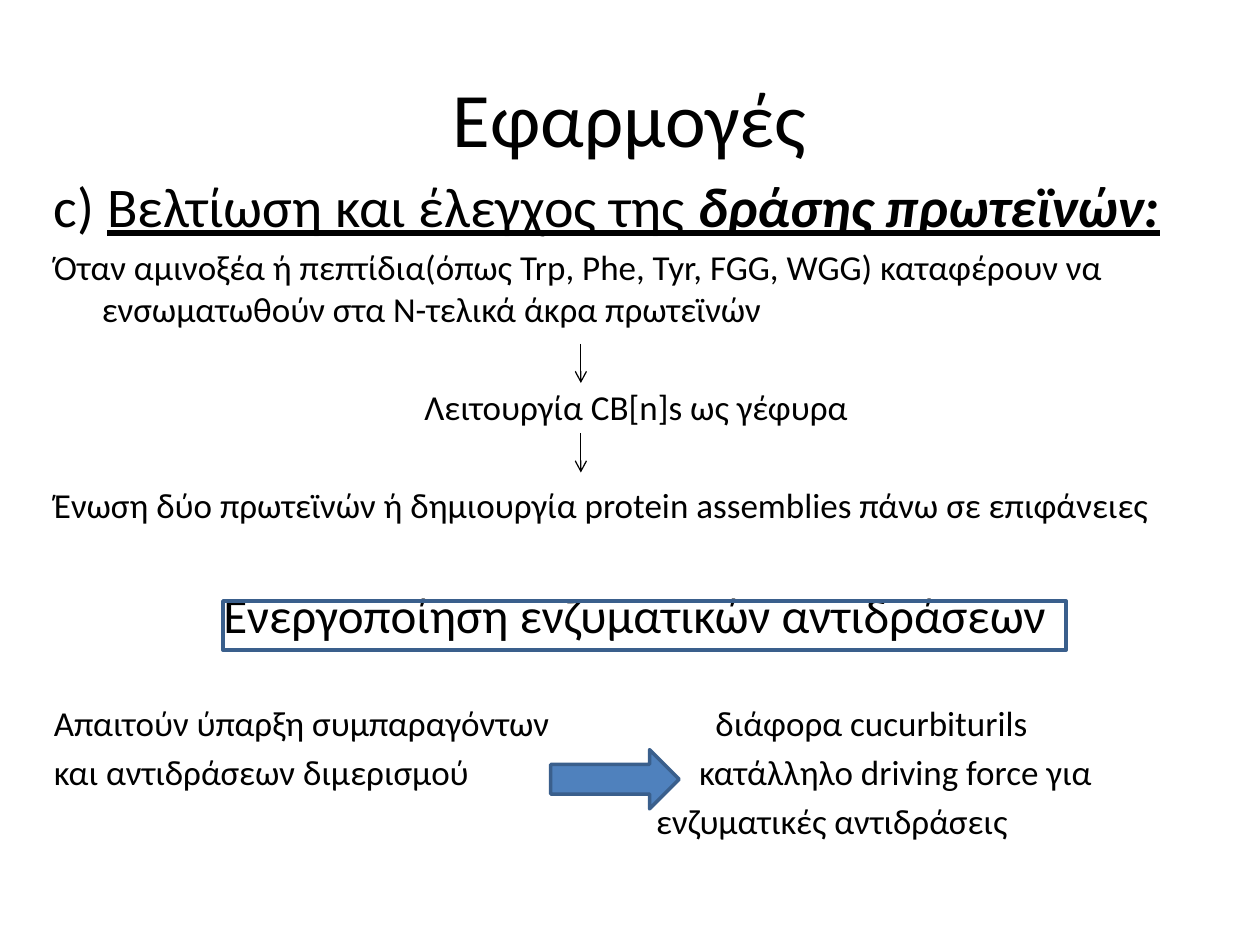
from dataclasses import dataclass
from typing import NamedTuple

from lxml import etree
from pptx import Presentation
from pptx.dml.color import RGBColor
from pptx.enum import shapes, text
from pptx.oxml.ns import qn
from pptx.util import Inches, Pt


@dataclass(frozen=True)
class Theme:
    font: str = "Calibri"
    ink: str = "000000"
    blue: str = "4F81BD"
    edge: str = "3A5F8C"
    title: int = 44
    lead: int = 32
    head: int = 28
    body: int = 20
    gap: float = 3.8  # space before a paragraph
    skip: int = 32    # space before a new step
    wide: int = 34    # space before the heading


class Run(NamedTuple):
    words: str
    style: dict = {}


class Para(NamedTuple):
    runs: list
    size: int
    gap: float
    mid: bool = False
    left: float = 0.38
    hang: float = -0.38


T = Theme()
MID = text.PP_ALIGN.CENTER


def body(words: str, gap: float = T.gap, **more) -> Para:
    return Para([Run(words)], T.body, gap, **more)


TITLE = [Para([Run("Εφαρμογές")], T.title, 0, mid=True, left=0, hang=0)]
BODY = [
    Para([Run("c) "),
          Run("Βελτίωση και έλεγχος της ", {"underline": True}),
          Run("δράσης πρωτεϊνών:", {"underline": True, "bold": True, "italic": True})],
         T.lead, T.gap),
    body("Όταν αμινοξέα ή πεπτίδια(όπως Trp, Phe, Tyr, FGG, WGG) καταφέρουν να "
         "ενσωματωθούν στα Ν-τελικά άκρα πρωτεϊνών"),
    body("Λειτουργία CB[n]s ως γέφυρα ", T.skip, mid=True),
    body("Ένωση δύο πρωτεϊνών ή δημιουργία protein assemblies πάνω σε επιφάνειες", T.skip),
    Para([Run("Ενεργοποίηση ενζυματικών αντιδράσεων ")], T.head, T.wide, mid=True),
]
NEEDS = [
    body("Απαιτούν ύπαρξη συμπαραγόντων", 0),
    body("και αντιδράσεων διμερισμού"),
]
GAINS = [
    body("διάφορα cucurbiturils", 0, left=0.47, hang=0),
    body("κατάλληλο driving force για", left=0.34, hang=0),
    body("ενζυματικές αντιδράσεις", left=0, hang=0),
]


def color(code: str) -> RGBColor:
    return RGBColor.from_string(code)


def write(slide, at: tuple, paras: list, anchor=text.MSO_ANCHOR.TOP) -> None:
    frame = slide.shapes.add_textbox(*map(Inches, at)).text_frame
    frame.word_wrap = True
    frame.vertical_anchor = anchor
    for i, item in enumerate(paras):
        para = frame.add_paragraph() if i else frame.paragraphs[0]
        para.space_before = Pt(item.gap)
        if item.mid:
            para.alignment = MID
        # Hanging indent
        props = para._p.get_or_add_pPr()
        props.set("marL", str(Inches(item.left)))
        props.set("indent", str(Inches(item.hang)))
        for part in item.runs:
            run = para.add_run()
            run.text = part.words
            run.font.color.rgb = color(T.ink)
            style = {"name": T.font, "size": Pt(item.size), **part.style}
            for key, value in style.items():
                setattr(run.font, key, value)


def arrow(slide, x: float, top: float, end: float) -> None:
    line = slide.shapes.add_connector(
        shapes.MSO_CONNECTOR.STRAIGHT, *map(Inches, (x, top, x, end)))
    line.line.color.rgb = color(T.ink)
    line.line.width = Pt(0.75)
    etree.SubElement(line.line._get_or_add_ln(), qn("a:tailEnd"), type="arrow")
    etree.SubElement(line._element.spPr, qn("a:effectLst"))


def block(slide, kind, at: tuple, fill: str = "") -> None:
    shape = slide.shapes.add_shape(kind, *map(Inches, at))
    shape.shadow.inherit = False
    shape.line.color.rgb = color(T.edge)
    shape.line.width = Pt(2)
    if fill:
        shape.fill.solid()
        shape.fill.fore_color.rgb = color(fill)
    else:
        shape.fill.background()


def main() -> None:
    deck = Presentation()
    deck.slide_width, deck.slide_height = Inches(10), Inches(7.5)
    slide = deck.slides.add_slide(deck.slide_layouts[6])

    # Title and text
    write(slide, (0.5, 0.3, 9, 1.25), TITLE, text.MSO_ANCHOR.MIDDLE)
    write(slide, (0.33, 1.31, 9.5, 4.1), BODY)

    # Two columns at the bottom
    write(slide, (0.33, 5.52, 4.5, 0.85), NEEDS)
    write(slide, (5.11, 5.52, 4.72, 1.25), GAINS)

    # Steps down to the protein assemblies
    for top in (2.73, 3.44):
        arrow(slide, 4.61, top, top + 0.31)

    # Heading frame and arrow between the columns
    block(slide, shapes.MSO_SHAPE.RECTANGLE, (1.77, 4.77, 6.69, 0.39))
    block(slide, shapes.MSO_SHAPE.RIGHT_ARROW, (4.37, 5.95, 1.02, 0.47), T.blue)

    deck.save("out.pptx")


if __name__ == "__main__":
    main()
